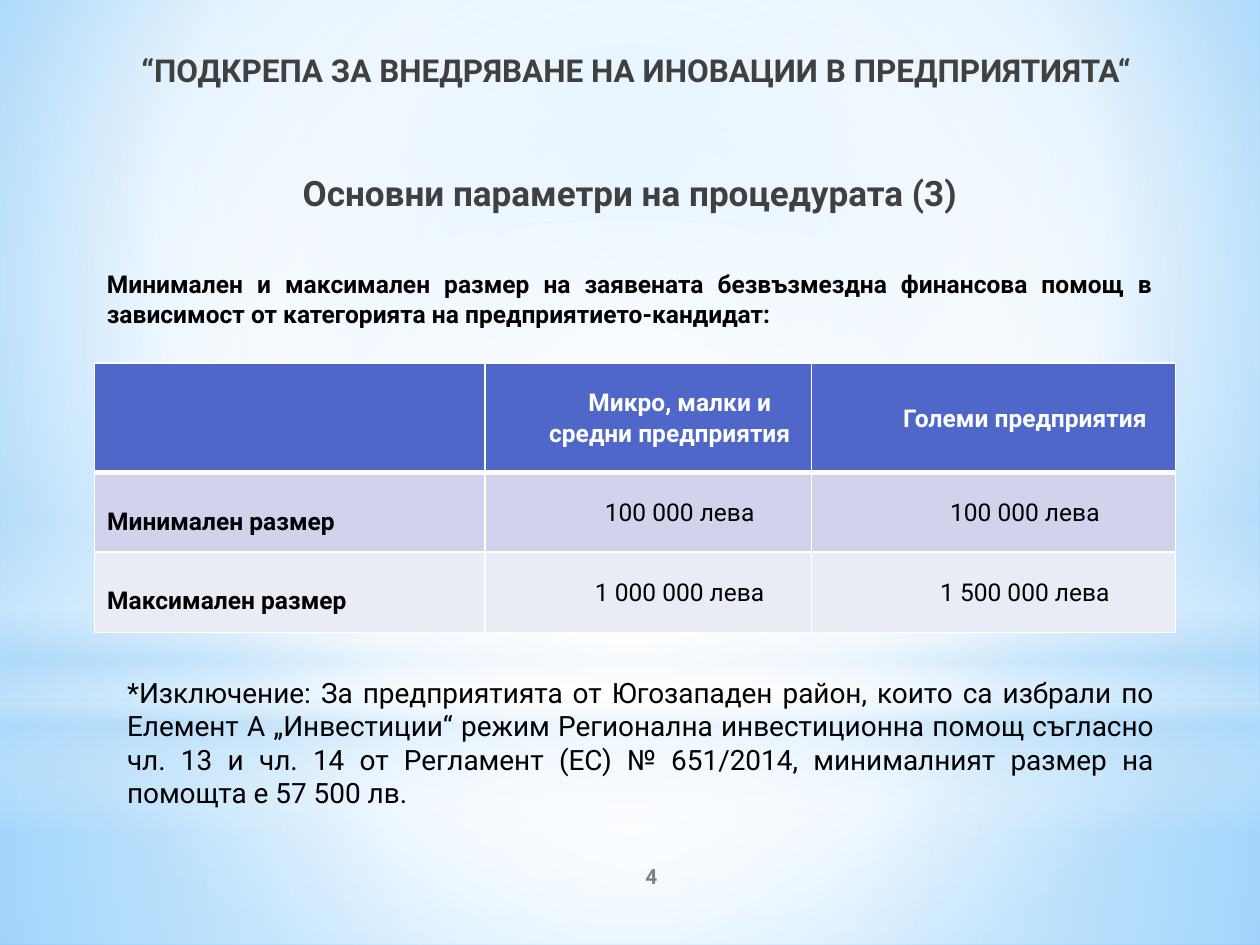
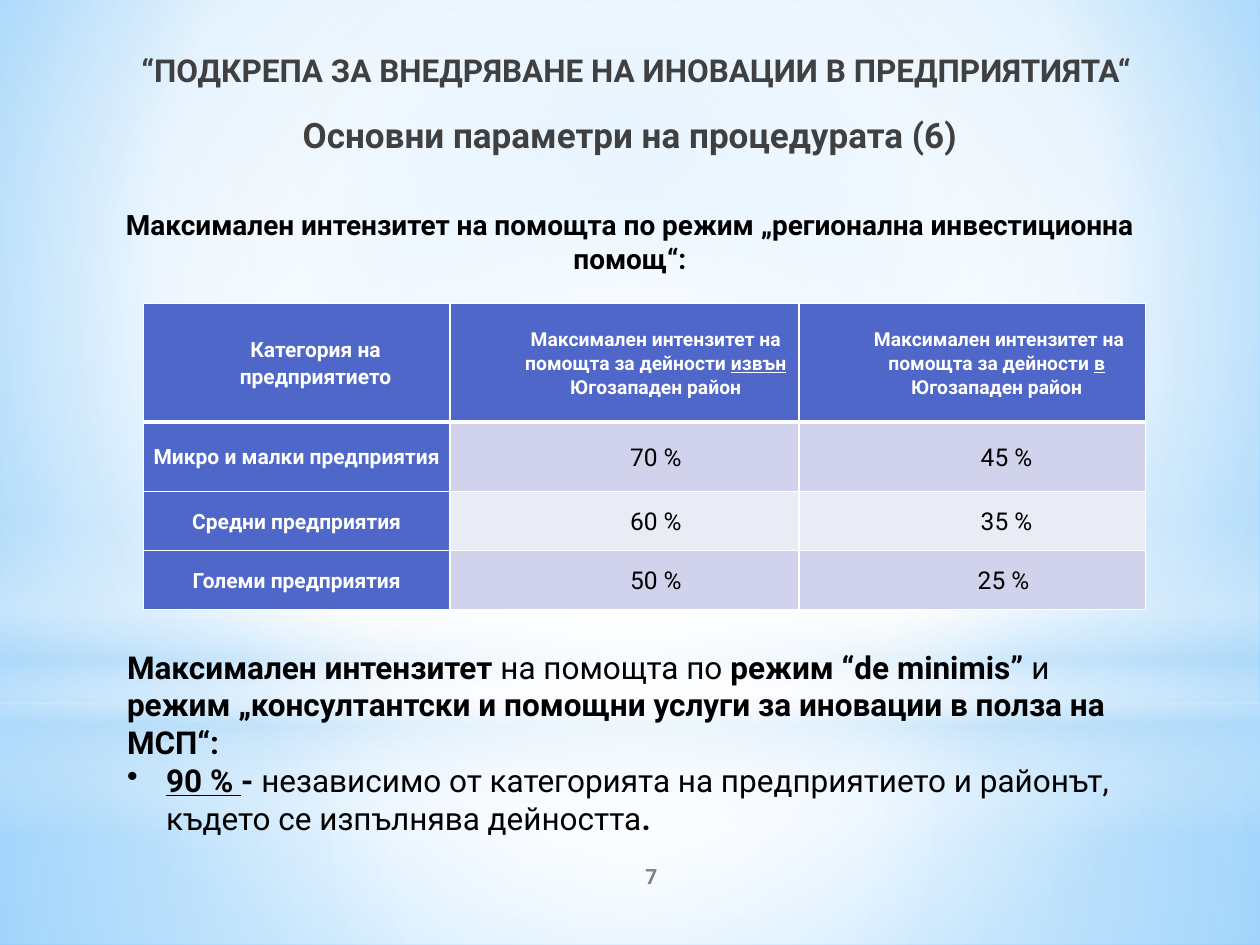
from lxml import etree
from pptx import Presentation
from pptx import util as u
from pptx.dml.color import RGBColor
from pptx.enum import shapes, text
from pptx.oxml import ns

PX = 9144
FONT = "Roboto"
BLACK, WHITE, GREY, DARK = "000000", "FFFFFF", "808080", "404040"
SKY, BLUE, LILAC, PALE = "B4DCFA", "4E67C8", "D0D3EB", "E9EBF5"
MID = (50, 50, 50, 50)
BOX, OVAL = shapes.MSO_SHAPE.RECTANGLE, shapes.MSO_SHAPE.OVAL
LEFT, CENTER, JUST = text.PP_ALIGN.LEFT, text.PP_ALIGN.CENTER, text.PP_ALIGN.JUSTIFY
TITLE = "“ПОДКРЕПА ЗА ВНЕДРЯВАНЕ НА ИНОВАЦИИ В ПРЕДПРИЯТИЯТА“ "
GLOWS = [
    (BOX, (0, 558, 1000, 192),
     [(0, WHITE, 91), (37, WHITE, 76), (100, SKY, 79)], MID),
    (BOX, (0, 0, 1000, 558),
     [(0, WHITE, 89), (48, WHITE, 62), (100, SKY, 79)], MID),
    (BOX, (0, 412, 1000, 250),
     [(0, WHITE, 0), (29, WHITE, 30), (45, SKY, 40), (55, WHITE, 26),
      (65, SKY, 60), (100, WHITE, 0)], None),
    (OVAL, (0, 175, 1000, 558), [(0, WHITE, 100), (56, WHITE, 0)], MID),
]


def px(*vals):
    """Turn px lengths into EMU."""
    return [u.Emu(v * PX) for v in vals]


def rgb(code):
    """Turn a hex string into a colour."""
    return RGBColor.from_string(code)


def node(root, tag, **attrs):
    """Append a drawing element with attributes."""
    return etree.SubElement(root, ns.qn(tag), {k: str(v) for k, v in attrs.items()})


def blend(fill, root, stops, focus=None):
    """Fill with a gradient, round when it has a focus, else downward."""
    fill.solid()
    old = root.find(ns.qn("a:solidFill"))
    grad = etree.Element(ns.qn("a:gradFill"), rotWithShape="1")
    marks = node(grad, "a:gsLst")
    for pos, code, alpha in stops:
        stop = node(marks, "a:gs", pos=pos * 1000)
        tint = node(stop, "a:srgbClr", val=code)
        node(tint, "a:alpha", val=alpha * 1000)
    if focus:
        ring = node(grad, "a:path", path="circle")
        node(ring, "a:fillToRect", **{k: v * 1000 for k, v in zip("ltrb", focus)})
    else:
        node(grad, "a:lin", ang=90 * 60000, scaled=0)
    root.replace(old, grad)


def write(frame, runs, more=False, size=14, color=BLACK, bold=False, align=LEFT,
          left=0, first=0, line=None, before=0, after=0, bullet=None):
    """Write one paragraph of plain text or (text, changes) runs."""
    para = frame.add_paragraph() if more else frame.paragraphs[0]
    para.alignment = align
    para.space_before, para.space_after = u.Pt(before), u.Pt(after)
    if line:
        para.line_spacing = line
    props = para._p.get_or_add_pPr()
    props.set("marL", str(left * PX))
    props.set("indent", str(first * PX))
    if bullet:
        node(props, "a:buChar", char=bullet)
    for words, change in [(runs, {})] if isinstance(runs, str) else runs:
        run = para.add_run()
        run.text = words
        font = run.font
        font.name, font.size = FONT, u.Pt(size)
        font.color.rgb = rgb(color)
        font.bold = change.get("bold", bold)
        font.underline = change.get("under", False)


def block(slide, area, anchor=text.MSO_ANCHOR.TOP):
    """Add a wrapping text box and return its frame."""
    frame = slide.shapes.add_textbox(*px(*area)).text_frame
    frame.word_wrap = True
    frame.vertical_anchor = anchor
    return frame


def start(deck, number):
    """Add a slide with the shared backdrop, number and title."""
    slide = deck.slides.add_slide(deck.slide_layouts[6])
    back = slide.background.fill
    back.solid()
    root = slide.element.find(".//" + ns.qn("p:bgPr"))
    blend(back, root, [(0, "9ED5FF", 100), (60, WHITE, 100), (100, "5BB9FF", 100)],
          (20, 10, 20, 60))
    for kind, area, stops, focus in GLOWS:
        glow = slide.shapes.add_shape(kind, *px(*area))
        glow.shadow.inherit = False
        glow.line.fill.background()
        blend(glow.fill, glow._element.spPr, stops, focus)
    write(block(slide, (417, 675, 200, 40), text.MSO_ANCHOR.MIDDLE), number,
          size=12, color=GREY, bold=True, align=CENTER)
    write(block(slide, (59, 36, 898, 94)), TITLE,
          size=18, color=DARK, bold=True, align=CENTER)
    return slide


def intro(slide, area, head, lead, **form):
    """Add the slide heading and the bold lead-in under it."""
    frame = block(slide, area)
    write(frame, head, size=20, color=DARK, bold=True, align=CENTER, after=6)
    write(frame, lead, more=True, bold=True, after=6, **form)


def edge(cell, top, low):
    """Draw the white borders of a cell."""
    props = cell._tc.get_or_add_tcPr()
    for spot, (side, wide) in enumerate(zip("LRTB", (1, 1, top, low))):
        rule = etree.Element(ns.qn("a:ln" + side), w=str(wide * 12700))
        node(node(rule, "a:solidFill"), "a:srgbClr", val=WHITE)
        props.insert(spot, rule)


def table(slide, spot, cols, rows, cells):
    """Add a table; each cell is (runs, fill, format) or has a top inset too."""
    size = sum(cols), sum(rows)
    grid = slide.shapes.add_table(len(rows), len(cols), *px(*spot, *size)).table
    grid.first_row = grid.horz_banding = False
    for col, wide in zip(grid.columns, px(*cols)):
        col.width = wide
    for r, (row, high) in enumerate(zip(grid.rows, px(*rows))):
        row.height = high
        for cell, (runs, fill, form, *inset) in zip(row.cells, cells[r]):
            cell.fill.solid()
            cell.fill.fore_color.rgb = rgb(fill)
            if inset:
                cell.margin_top = px(*inset)[0]
            else:
                cell.vertical_anchor = text.MSO_ANCHOR.MIDDLE
                cell.margin_left, cell.margin_right = px(7, 7)
                cell.margin_top = cell.margin_bottom = 0
            edge(cell, 3 if r == 1 else 1, 1 if r else 3)
            if runs:
                write(cell.text_frame, runs, **form)


def head(runs, size=14, left=50, first=0):
    """Describe a white-on-blue cell."""
    return runs, BLUE, dict(size=size, color=WHITE, bold=True, align=CENTER,
                            left=left, first=first, line=1.07)


def value(words, fill):
    """Describe a value cell."""
    return words, fill, dict(align=CENTER, left=50, line=1.07)


def label(words, fill):
    """Describe a bold row label set low in its cell."""
    return words, fill, dict(bold=True), 28


def limits(deck):
    """Build the slide on smallest and largest grants."""
    slide = start(deck, "4")
    intro(slide, (75, 131, 850, 575), "Основни параметри на процедурата (3)",
          "Минимален и максимален размер на заявената безвъзмездна финансова помощ "
          "в зависимост от категорията на предприятието-кандидат:",
          align=JUST, before=26)
    cells = [[head(""), head("Микро, малки и средни предприятия ", left=39, first=11),
              head(" Големи предприятия ")]]
    for name, small, large, fill in [
            ("Минимален размер", "100 000 лева", "100 000 лева", LILAC),
            ("Максимален размер", "1 000 000 лева", "1 500 000 лева", PALE)]:
        cells.append([label(name, fill), value(small, fill), value(large, fill)])
    table(slide, (75, 288), (310, 259, 289), (87, 63, 64), cells)
    write(block(slide, (91, 531, 835, 118)),
          "*Изключение: За предприятията от Югозападен район, които са избрали по "
          "Елемент А „Инвестиции“ режим Регионална инвестиционна помощ съгласно "
          "чл. 13 и чл. 14 от Регламент (ЕС) № 651/2014, минималният размер на "
          "помощта е 57 500 лв.", size=16, align=JUST)


def rates(deck):
    """Build the slide on aid intensity."""
    slide = start(deck, "7")
    intro(slide, (75, 85, 850, 621), "Основни параметри на процедурата (6)",
          "Максимален интензитет на помощта по режим „регионална инвестиционна "
          "помощ“:", size=16, align=CENTER, before=24)
    lead, tail = "Максимален интензитет на помощта за дейности ", (" Югозападен район", {})
    under, bold = {"under": True}, {"bold": True}
    cells = [[head("Категория на предприятието", 12, 30),
              head([(lead, {}), ("извън", under), tail], 11),
              head([(" " + lead, {}), ("в", under), tail], 11, 39)]]
    for name, out, within, fill in [
            ("Микро и малки предприятия", "70 %", " 45 %", LILAC),
            ("Средни предприятия", "60 %", " 35 %", PALE),
            ("Големи предприятия", "50 %", "25 %", LILAC)]:
        cells.append([head(name, 12, 0), value(out, fill), value(within, fill)])
    table(slide, (114, 241), (243, 277, 275), (94, 55, 47, 47), cells)
    frame = block(slide, (91, 509, 835, 162))
    write(frame, [("Максимален интензитет ", bold), ("на помощта по ", {}),
                  ("режим “de minimis” ", bold), ("и ", {}),
                  ("режим „консултантски и помощни услуги за иновации в полза на "
                   "МСП“:", bold)], size=18)
    write(frame, [("90 % ", {**bold, **under}), ("- ", bold),
                  ("независимо от категорията на предприятието и районът, където се "
                   "изпълнява дейността", {}), (".", bold)],
          more=True, size=18, left=31, first=-31, bullet="•")


def main():
    """Build and save the deck."""
    deck = Presentation()
    deck.slide_width, deck.slide_height = px(1000, 750)
    limits(deck)
    rates(deck)
    deck.save("out.pptx")


if __name__ == "__main__":
    main()
